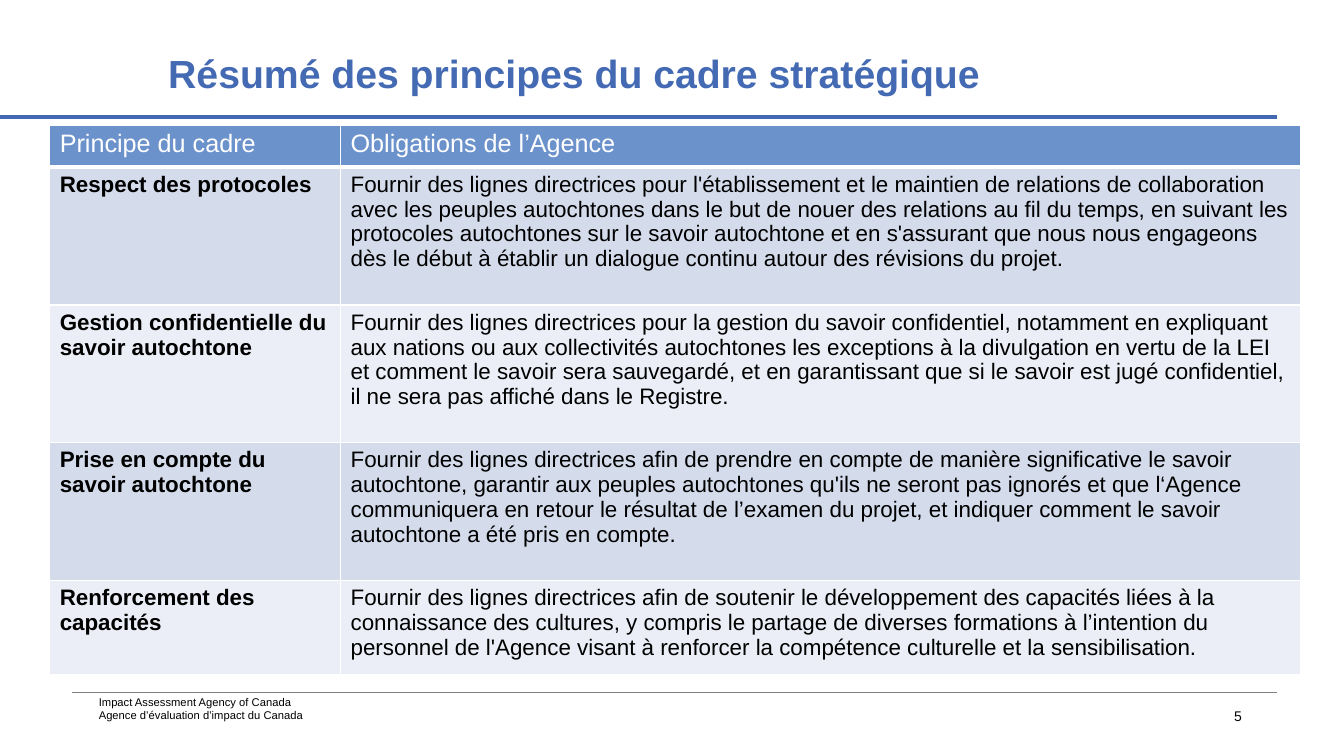
from dataclasses import dataclass
from typing import Optional

from lxml.etree import SubElement
from pptx import Presentation
from pptx.dml.color import RGBColor
from pptx.enum.shapes import MSO_CONNECTOR
from pptx.enum.text import MSO_ANCHOR, PP_ALIGN
from pptx.oxml.ns import qn
from pptx.util import Pt

BLUE = RGBColor(0x42, 0x69, 0xB2)
TITLE_BLUE = RGBColor(0x43, 0x6A, 0xB3)
HEADER_BLUE = RGBColor(0x6C, 0x92, 0xCC)
BAND_DARK = RGBColor(0xD4, 0xDC, 0xEC)
BAND_LIGHT = RGBColor(0xEB, 0xEE, 0xF6)
GREY = RGBColor(0x7F, 0x7F, 0x7F)
BLACK = RGBColor(0, 0, 0)
WHITE = RGBColor(0xFF, 0xFF, 0xFF)


@dataclass
class Label:
    lines: list[str]
    box: tuple[float, float, float, float]
    size: float
    color: RGBColor = BLACK
    bold: bool = False
    align: PP_ALIGN = PP_ALIGN.LEFT
    anchor: MSO_ANCHOR = MSO_ANCHOR.BOTTOM
    inset: Optional[float] = 0
    spacing: Optional[float] = None


@dataclass
class Rule:
    left: float
    right: float
    y: float
    color: RGBColor
    width: float


@dataclass
class Principle:
    name: str
    duty: str
    height: float


LABELS = [
    Label(["Impact Assessment Agency of Canada", "Agence d’évaluation d’impact du Canada"],
          (70.56, 486.7, 303.8, 28.8), 8),
    Label(["5"], (856.8, 501.8, 37.4, 19.4), 10, align=PP_ALIGN.RIGHT,
          anchor=MSO_ANCHOR.TOP, inset=None),
    Label(["Résumé des principes du cadre stratégique"], (120.2, 33.1, 648, 36), 28,
          TITLE_BLUE, True, spacing=0.9),
]
RULES = [Rule(0, 912, 83.5, BLUE, 3), Rule(51.4, 912, 494.2, GREY, 0.25)]

HEADER = Principle("Principe du cadre", "Obligations de l’Agence", 30)
PRINCIPLES = [
    Principle(
        "Respect des protocoles",
        "Fournir des lignes directrices pour l'établissement et le maintien de relations de "
        "collaboration avec les peuples autochtones dans le but de nouer des relations au fil "
        "du temps, en suivant les protocoles autochtones sur le savoir autochtone et en "
        "s'assurant que nous nous engageons dès le début à établir un dialogue continu autour "
        "des révisions du projet.", 98.6),
    Principle(
        "Gestion confidentielle du savoir autochtone",
        "Fournir des lignes directrices pour la gestion du savoir confidentiel, notamment en "
        "expliquant aux nations ou aux collectivités autochtones les exceptions à la "
        "divulgation en vertu de la LEI et comment le savoir sera sauvegardé, et en "
        "garantissant que si le savoir est jugé confidentiel, il ne sera pas affiché dans le "
        "Registre.", 98),
    Principle(
        "Prise en compte du savoir autochtone",
        "Fournir des lignes directrices afin de prendre en compte de manière significative le "
        "savoir autochtone, garantir aux peuples autochtones qu'ils ne seront pas ignorés et "
        "que l‘Agence communiquera en retour le résultat de l’examen du projet, et indiquer "
        "comment le savoir autochtone a été pris en compte.", 98.6),
    Principle(
        "Renforcement des capacités",
        "Fournir des lignes directrices afin de soutenir le développement des capacités liées "
        "à la connaissance des cultures, y compris le partage de diverses formations à "
        "l’intention du personnel de l'Agence visant à renforcer la compétence culturelle et "
        "la sensibilisation.", 67.7),
]
COLUMN_WIDTHS = [207.8, 685.9]


def write(p, text: str, size: float, color: RGBColor, bold: bool) -> None:
    r = p.add_run()
    r.text = text
    for name, value in {"name": "Arial", "size": Pt(size), "bold": bold}.items():
        setattr(r.font, name, value)
    r.font.color.rgb = color


def add_label(s, label: Label) -> None:
    tf = s.shapes.add_textbox(*map(Pt, label.box)).text_frame
    formats = {"word_wrap": True, "vertical_anchor": label.anchor}
    if label.inset is not None:
        for side in ("left", "top", "right", "bottom"):
            formats[f"margin_{side}"] = Pt(label.inset)
    for name, value in formats.items():
        setattr(tf, name, value)
    for i, line in enumerate(label.lines):
        p = tf.add_paragraph() if i else tf.paragraphs[0]
        p.alignment = label.align
        p.line_spacing = label.spacing
        write(p, line, label.size, label.color, label.bold)


def add_rule(s, rule: Rule) -> None:
    line = s.shapes.add_connector(MSO_CONNECTOR.STRAIGHT, Pt(rule.left), Pt(rule.y),
                                  Pt(rule.right), Pt(rule.y))
    line.line.color.rgb = rule.color
    line.line.width = Pt(rule.width)
    SubElement(line._element.spPr, qn("a:effectLst"))


def style_cell(cell, fill: RGBColor, bottom: float) -> None:
    # Borders come before the fill in the cell properties
    tc_pr = cell._tc.get_or_add_tcPr()
    for edge, width in {"lnL": 1, "lnR": 1, "lnT": 1, "lnB": bottom}.items():
        ln = SubElement(tc_pr, qn(f"a:{edge}"), w=str(Pt(width)))
        SubElement(SubElement(ln, qn("a:solidFill")), qn("a:srgbClr"), val=str(WHITE))
    cell.fill.solid()
    cell.fill.fore_color.rgb = fill


def add_principles(s, left: float, top: float) -> None:
    rows = [HEADER, *PRINCIPLES]
    height = sum(row.height for row in rows)
    table = s.shapes.add_table(len(rows), 2, Pt(left), Pt(top),
                               Pt(sum(COLUMN_WIDTHS)), Pt(height)).table
    for column, width in zip(table.columns, COLUMN_WIDTHS):
        column.width = Pt(width)
    for i, row in enumerate(rows):
        table.rows[i].height = Pt(row.height)
        is_header = i == 0
        band = BAND_DARK if i % 2 else BAND_LIGHT
        for j, text in enumerate((row.name, row.duty)):
            cell = table.cell(i, j)
            style_cell(cell, HEADER_BLUE if is_header else band, 3 if is_header else 1)
            write(cell.text_frame.paragraphs[0], text, 18 if is_header else 16,
                  WHITE if is_header else BLACK, not is_header and j == 0)


def main() -> None:
    prs = Presentation()
    prs.slide_width, prs.slide_height = Pt(960), Pt(540)
    s = prs.slides.add_slide(prs.slide_layouts[6])

    # Title, footer and page number
    for label in LABELS:
        add_label(s, label)

    # Lines under the title and above the footer
    for rule in RULES:
        add_rule(s, rule)

    # Table of principles
    add_principles(s, 35.5, 89.3)

    prs.save("out.pptx")


if __name__ == "__main__":
    main()
